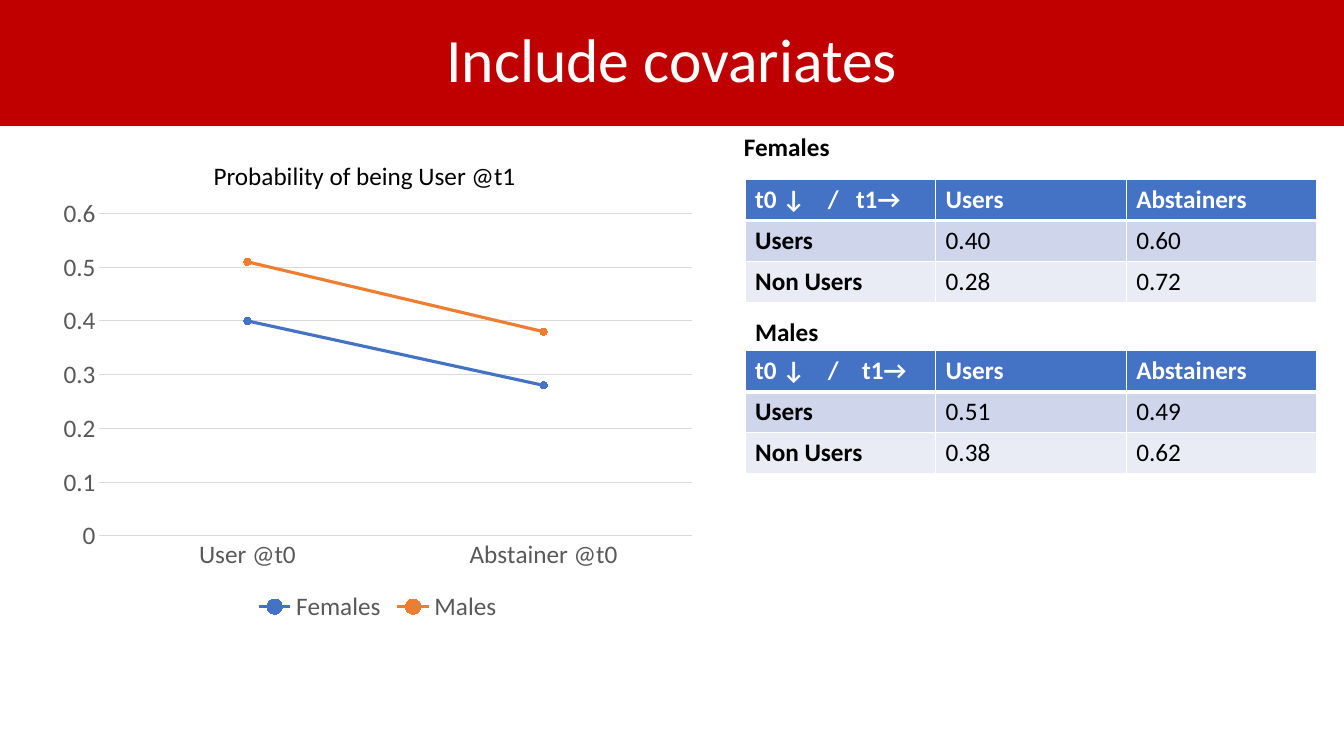
from lxml import etree
from pptx import Presentation
from pptx.chart.data import CategoryChartData
from pptx.dml.color import RGBColor
from pptx.enum import chart as ch, text
from pptx.oxml import ns
from pptx.util import Inches, Pt

WHITE = RGBColor(0xFF, 0xFF, 0xFF)
BLACK = RGBColor(0, 0, 0)
RED = RGBColor(0xC0, 0, 0)
BLUE = RGBColor(0x44, 0x72, 0xC4)
ORANGE = RGBColor(0xED, 0x7D, 0x31)
BAND_DARK = RGBColor(0xCF, 0xD5, 0xEA)
BAND_LIGHT = RGBColor(0xE9, 0xEB, 0xF5)
GREY = RGBColor(0x59, 0x59, 0x59)
GRID = RGBColor(0xD9, 0xD9, 0xD9)
FONT = "Calibri"


def write(tf, words, size=18, color=BLACK, bold=False, align=None, tabs=()):
    """Write one formatted paragraph; tabs are stops in inches."""
    p = tf.paragraphs[0]
    p.alignment = align
    if tabs:
        stops = etree.SubElement(p._p.get_or_add_pPr(), ns.qn("a:tabLst"))
        for stop in tabs:
            etree.SubElement(stops, ns.qn("a:tab"), pos=str(Inches(stop)), algn="l")
    r = p.add_run()
    r.text = words
    r.font.name, r.font.size = FONT, Pt(size)
    r.font.color.rgb, r.font.bold = color, bold
    return p


def add_borders(cell, bottom):
    """Give a cell white borders, 1 pt except at the bottom."""
    tc_pr = cell._tc.get_or_add_tcPr()
    for side, width in (("L", 1), ("R", 1), ("T", 1), ("B", bottom)):
        ln = etree.SubElement(tc_pr, ns.qn(f"a:ln{side}"), w=str(Pt(width)))
        fill = etree.SubElement(ln, ns.qn("a:solidFill"))
        etree.SubElement(fill, ns.qn("a:srgbClr"), val=str(WHITE))


prs = Presentation()
prs.slide_width, prs.slide_height = Inches(13.33), Inches(7.5)
s = prs.slides.add_slide(prs.slide_layouts[5])

# Title band
title = s.shapes.title
title.left, title.top = Inches(0), Inches(0)
title.width, title.height = prs.slide_width, Inches(1.25)
title.fill.solid()
title.fill.fore_color.rgb = RED
title.text_frame.vertical_anchor = text.MSO_ANCHOR.MIDDLE
p = write(title.text_frame, "Include covariates", size=44, color=WHITE,
          align=text.PP_ALIGN.CENTER)
p.line_spacing = 0.9

# Headings
for words, left, top, width, bold in (
    ("Females", 7.28, 1.25, 1.54, True),
    ("Males", 7.39, 3.09, 1.54, True),
    ("Probability of being User @t1", 2.02, 1.54, 3.23, False),
):
    tf = s.shapes.add_textbox(Inches(left), Inches(top), Inches(width), Inches(0.4)).text_frame
    tf.word_wrap = bold
    write(tf, words, bold=bold)

# Transition tables
for top, tabs, users, non_users in (
    (1.78, (0.72, 1), ("0.40", "0.60"), ("0.28", "0.72")),
    (3.48, (0.72, 1.06), ("0.51", "0.49"), ("0.38", "0.62")),
):
    rows = (("t0 ↓\t/\tt1→", "Users", "Abstainers"),
            ("Users", *users), ("Non Users", *non_users))
    frame = s.shapes.add_table(3, 3, Inches(7.39), Inches(top), Inches(5.67), Inches(1.22))
    for i, (row, fill) in enumerate(zip(rows, (BLUE, BAND_DARK, BAND_LIGHT))):
        for j, words in enumerate(row):
            cell = frame.table.cell(i, j)
            header = i == 0
            add_borders(cell, bottom=3 if header else 1)
            cell.fill.solid()
            cell.fill.fore_color.rgb = fill
            write(cell.text_frame, words, color=WHITE if header else BLACK,
                  bold=header or j == 0, tabs=tabs if header and j == 0 else ())

# Line chart
data = CategoryChartData()
data.categories = ["User @t0", "Abstainer @t0"]
data.add_series("Females", (0.4, 0.28))
data.add_series("Males", (0.51, 0.38))
chart = s.shapes.add_chart(ch.XL_CHART_TYPE.LINE_MARKERS, Inches(0.5), Inches(1.88),
                           Inches(6.49), Inches(4.34), data).chart
chart.has_title = False
chart.font.name, chart.font.size = FONT, Pt(18)
chart.font.color.rgb = GREY
chart.has_legend = True
chart.legend.position = ch.XL_LEGEND_POSITION.BOTTOM
chart.legend.include_in_layout = False

# White chart background without an outline
sp_pr = etree.Element(ns.qn("c:spPr"))
fill = etree.SubElement(sp_pr, ns.qn("a:solidFill"))
etree.SubElement(fill, ns.qn("a:srgbClr"), val=str(WHITE))
etree.SubElement(etree.SubElement(sp_pr, ns.qn("a:ln")), ns.qn("a:noFill"))
chart._chartSpace.find(ns.qn("c:chart")).addnext(sp_pr)

cat_axis, val_axis = chart.category_axis, chart.value_axis
for axis in (cat_axis, val_axis):
    axis.major_tick_mark = axis.minor_tick_mark = ch.XL_TICK_MARK.NONE
val_axis.minimum_scale, val_axis.maximum_scale, val_axis.major_unit = 0, 0.6, 0.1
val_axis.format.line.fill.background()
for line in (cat_axis.format.line, val_axis.major_gridlines.format.line):
    line.color.rgb, line.width = GRID, Pt(0.75)

plot = chart.plots[0]
plot.vary_by_categories = False
for series, color in zip(plot.series, (BLUE, ORANGE)):
    series.smooth = False
    series.format.line.color.rgb, series.format.line.width = color, Pt(2.25)
    marker = series.marker
    marker.style, marker.size = ch.XL_MARKER_STYLE.CIRCLE, 5
    marker.format.fill.solid()
    marker.format.fill.fore_color.rgb = color
    marker.format.line.color.rgb = color

prs.save("out.pptx")
